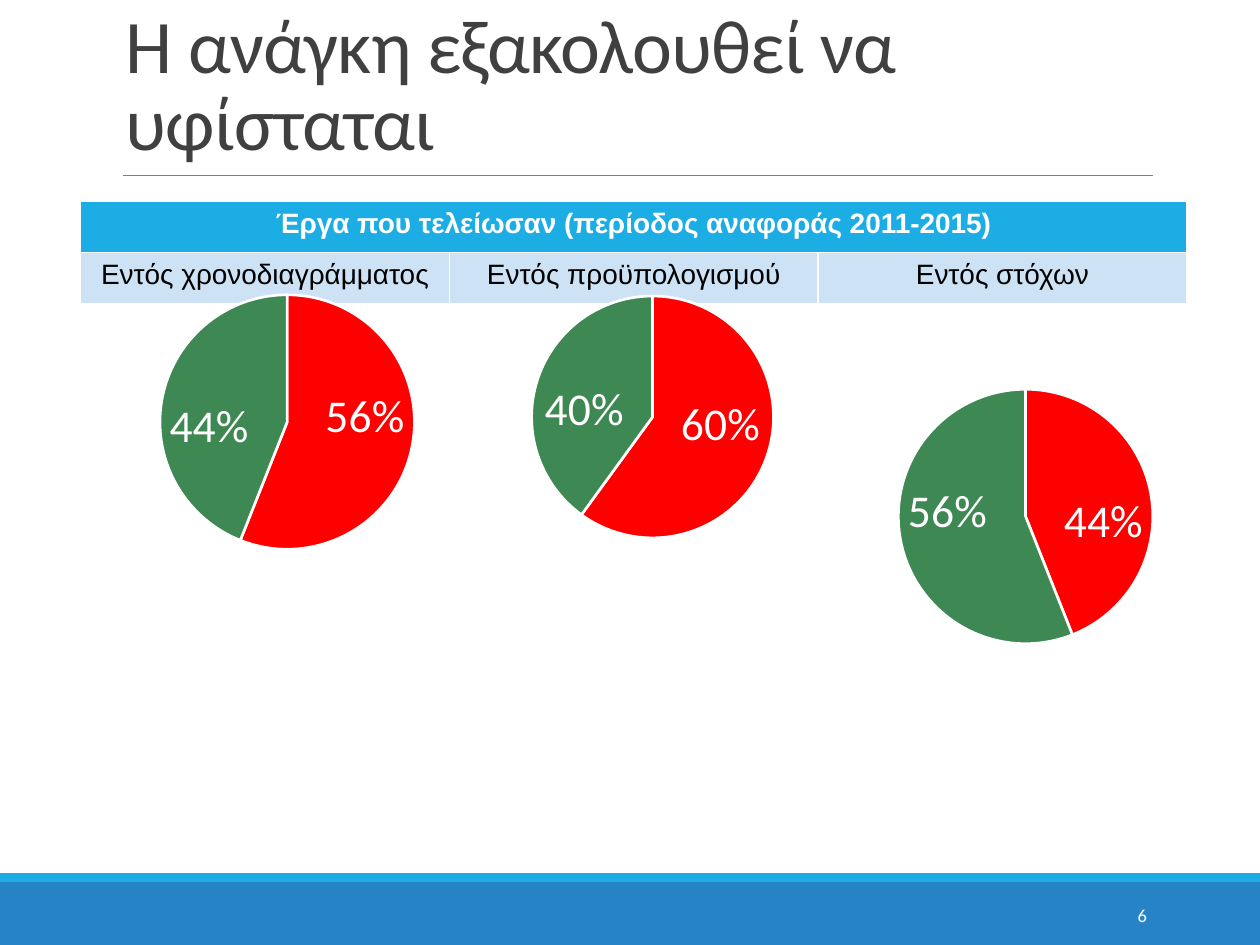
import lxml.etree
import pptx
import pptx.chart.data
import pptx.dml.color
import pptx.enum.chart
import pptx.enum.shapes
import pptx.enum.text
import pptx.oxml
import pptx.oxml.ns
import pptx.util

Inches = pptx.util.Inches
Align = pptx.enum.text.PP_ALIGN
Anchor = pptx.enum.text.MSO_ANCHOR
qn = pptx.oxml.ns.qn

THEME = {
    "blue": "2683C6", "sky": "1CADE4", "pale": "CDE3F5", "rule": "808080",
    "title": "404040", "white": "FFFFFF", "black": "000000",
    "missed": "FF0000", "met": "3E8853",
    "title_size": 43.2, "table_size": 16, "number_size": 10.5,
    "chart_size": 10, "label_size": 26,
    "body_font": "Calibri", "table_font": "Arial",
}


def color(name):
    return pptx.dml.color.RGBColor.from_string(THEME[name])


def write(frame, text, size, ink, font, align, anchor, bold=False):
    frame.word_wrap = True
    frame.vertical_anchor = anchor
    para = frame.paragraphs[0]
    para.alignment = align
    span = para.add_run()
    span.text = text
    span.font.size = pptx.util.Pt(THEME[size])
    span.font.color.rgb = color(ink)
    span.font.name = THEME[font]
    span.font.bold = bold
    return para, span


deck = pptx.Presentation()
deck.slide_width, deck.slide_height = Inches(10), Inches(7.5)
page = deck.slides.add_slide(deck.slide_layouts[6])

for top, height, fill in [(7, 0.5, "blue"), (6.93, 0.07, "sky")]:
    band = page.shapes.add_shape(
        pptx.enum.shapes.MSO_SHAPE.RECTANGLE, 0, Inches(top), Inches(10), Inches(height))
    band.shadow.inherit = False
    band.fill.solid()
    band.fill.fore_color.rgb = color(fill)
    band.line.fill.background()

rule = page.shapes.add_connector(
    pptx.enum.shapes.MSO_CONNECTOR.STRAIGHT,
    Inches(0.98), Inches(1.39), Inches(9.15), Inches(1.39))
rule.line.color.rgb = color("rule")
rule.line.width = pptx.util.Pt(0.5)
lxml.etree.SubElement(rule.element.spPr, qn("a:effectLst"))

title_box = page.shapes.add_textbox(Inches(0.9), Inches(0.11), Inches(8.25), Inches(1.26))
para, span = write(title_box.text_frame, "Η ανάγκη εξακολουθεί να υφίσταται",
                   "title_size", "title", "body_font", Align.LEFT, Anchor.BOTTOM)
para.line_spacing = 0.85
span.font._element.set("spc", "-50")

headings = ["Εντός χρονοδιαγράμματος", "Εντός προϋπολογισμού", "Εντός στόχων"]
table = page.shapes.add_table(
    2, 3, Inches(0.64), Inches(1.6), Inches(8.78), Inches(0.81)).table
table.cell(0, 0).merge(table.cell(0, 2))
write(table.cell(0, 0).text_frame, "Έργα που τελείωσαν (περίοδος αναφοράς 2011-2015)",
      "table_size", "white", "table_font", Align.CENTER, Anchor.TOP, True)
for column, heading in enumerate(headings):
    write(table.cell(1, column).text_frame, heading,
          "table_size", "black", "table_font", Align.CENTER, Anchor.TOP)
    for row, fill in enumerate(["sky", "pale"]):
        cell = table.cell(row, column)
        cell.fill.solid()
        cell.fill.fore_color.rgb = color(fill)

number_box = page.shapes.add_textbox(Inches(8.12), Inches(7.06), Inches(1.08), Inches(0.4))
write(number_box.text_frame, "6", "number_size", "white", "body_font",
      Align.RIGHT, Anchor.MIDDLE)

chart_width, chart_height = 3.74, 3.1
pies = [
    (0.23, 2.2, 2.28, 3.35, 2.02, (0.56, 0.44)),
    (3.13, 2.2, 5.18, 3.31, 1.92, (0.6, 0.4)),
    (6.09, 2.16, 8.14, 4.1, 2.02, (0.44, 0.56)),
]
for left, top, center_x, center_y, diameter, shares in pies:
    data = pptx.chart.data.CategoryChartData(number_format="0%")
    data.categories = ["1", "2"]
    data.add_series("Series 1", shares)
    chart = page.shapes.add_chart(
        pptx.enum.chart.XL_CHART_TYPE.PIE, Inches(left), Inches(top),
        Inches(chart_width), Inches(chart_height), data).chart
    chart.has_title = False
    chart.has_legend = False
    chart.font.size = pptx.util.Pt(THEME["chart_size"])
    chart.font.name = THEME["body_font"]
    chart.font.color.rgb = color("black")

    plot = chart.plots[0]
    plot.vary_by_categories = True
    for index, fill in enumerate(["missed", "met"]):
        slice_format = plot.series[0].points[index].format
        slice_format.fill.solid()
        slice_format.fill.fore_color.rgb = color(fill)
        slice_format.line.color.rgb = color("white")
        slice_format.line.width = pptx.util.Pt(1.5)

    labels = plot.series[0].data_labels
    labels.show_value = True
    labels.show_percentage = False
    labels.number_format = "0%"
    labels.number_format_is_linked = False
    labels.position = pptx.enum.chart.XL_LABEL_POSITION.INSIDE_END
    labels.font.size = pptx.util.Pt(THEME["label_size"])
    labels.font.name = THEME["body_font"]
    labels.font.color.rgb = color("white")

    plot_area = chart._chartSpace.xpath("c:chart/c:plotArea")[0]
    for old_layout in plot_area.xpath("c:layout"):
        plot_area.remove(old_layout)
    layout = pptx.oxml.parse_xml(f'<c:layout {pptx.oxml.ns.nsdecls("c")}/>')
    manual = lxml.etree.SubElement(layout, qn("c:manualLayout"))
    settings = {
        "layoutTarget": "inner", "xMode": "edge", "yMode": "edge",
        "x": (center_x - diameter / 2 - left) / chart_width,
        "y": (center_y - diameter / 2 - top) / chart_height,
        "w": diameter / chart_width, "h": diameter / chart_height,
    }
    for tag, value in settings.items():
        lxml.etree.SubElement(manual, qn(f"c:{tag}")).set("val", str(value))
    plot_area.insert(0, layout)

deck.save("out.pptx")
